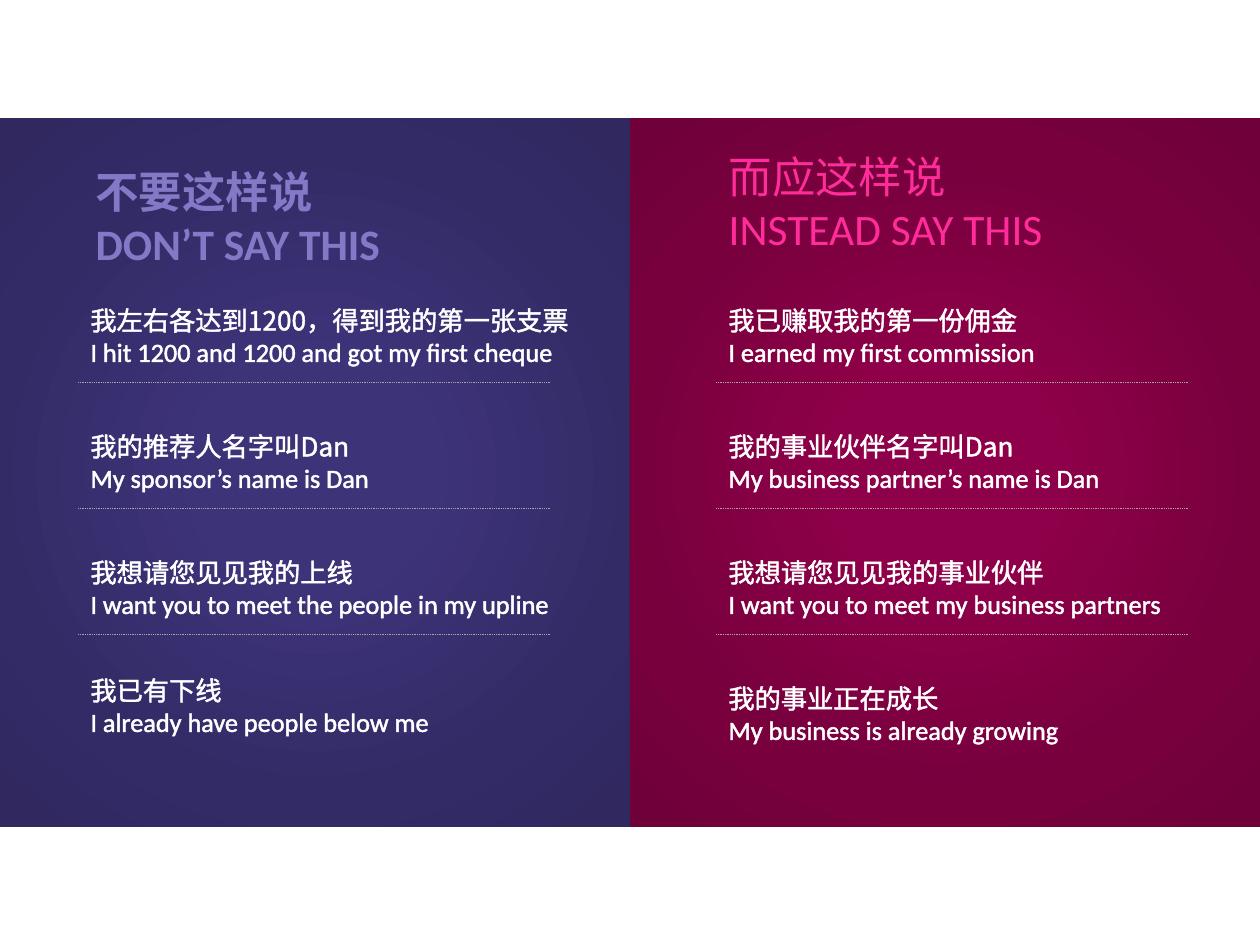
from dataclasses import dataclass

import lxml.etree
import pptx
import pptx.dml.color
import pptx.enum.dml
import pptx.enum.shapes
import pptx.enum.text
import pptx.oxml.ns
import pptx.util

EMU_PER_PX = 914400 / 126
PANEL_TOP, PANEL_WIDTH, PANEL_HEIGHT = 118, 630, 709
FIRST_ITEM_TOP, ITEM_HEIGHT, ITEM_PITCH = 298, 77, 126
FIRST_RULE_Y, RULE_WIDTH = 382, 472
HEADING_HEIGHT = 117


@dataclass(frozen=True)
class Theme:
    chinese_font: str = "Noto Sans CJK TC"
    english_font: str = "Calibri"
    heading_size: float = 24.8
    item_size: float = 15
    item_color: str = "FFFFFF"
    rule_color: str = "A6A6A6"
    purple: tuple[str, ...] = ("3D3379", "3D3379", "332B66", "30285F")
    purple_heading: str = "8479C7"
    magenta: tuple[str, ...] = ("8E0049", "8E0049", "77003D", "6F0039")
    magenta_heading: str = "FF2C99"


THEME = Theme()
GLOW_STOPS = (0, 23, 69, 97)


@dataclass(frozen=True)
class Phrase:
    chinese: str
    english: str
    width: int
    rise: int = 0


@dataclass(frozen=True)
class Side:
    panel_left: int
    glow: tuple[str, ...]
    placeholder: int
    heading: Phrase
    heading_left: int
    heading_top: int
    heading_color: str
    heading_bold: bool
    items_left: int
    items: tuple[Phrase, ...]


SIDES = (
    Side(0, THEME.purple, 0, Phrase("不要这样说", "DON’T SAY THIS", 354),
         83, 159, THEME.purple_heading, True, 78, (
             Phrase("我左右各达到1200，得到我的第一张支票",
                    "I hit 1200 and 1200 and got my first cheque", 525),
             Phrase("我的推荐人名字叫Dan", "My sponsor’s name is Dan", 396),
             Phrase("我想请您见见我的上线",
                    "I want you to meet the people in my upline", 520),
             Phrase("我已有下线", "I already have people below me", 460, rise=8),
         )),
    Side(630, THEME.magenta, 1, Phrase("而应这样说", "INSTEAD SAY THIS", 544),
         716, 144, THEME.magenta_heading, False, 716, (
             Phrase("我已赚取我的第一份佣金", "I earned my first commission", 483),
             Phrase("我的事业伙伴名字叫Dan",
                    "My business partner’s name is Dan", 471),
             Phrase("我想请您见见我的事业伙伴",
                    "I want you to meet my business partners", 508),
             Phrase("我的事业正在成长", "My business is already growing", 440),
         )),
)


def px(length: int) -> pptx.util.Emu:
    return pptx.util.Emu(round(length * EMU_PER_PX))


def rgb(color: str) -> pptx.dml.color.RGBColor:
    return pptx.dml.color.RGBColor.from_string(color)


def add_child(parent, tag: str, **attributes):
    return lxml.etree.SubElement(parent, pptx.oxml.ns.qn(tag), attributes)


def outline_text(run, color: str) -> None:
    properties = run.font._element
    outline = add_child(properties, "a:ln", w="3175")
    add_child(add_child(outline, "a:solidFill"), "a:srgbClr", val=color)
    properties.insert(0, outline)


def write_phrase(frame, phrase: Phrase, *, size: float, color: str,
                 bold: bool = False) -> None:
    """Put the Chinese line above its English translation."""
    frame.word_wrap = True
    frame.auto_size = pptx.enum.text.MSO_AUTO_SIZE.SHAPE_TO_FIT_TEXT
    frame.vertical_anchor = pptx.enum.text.MSO_ANCHOR.TOP
    lines = ((phrase.chinese, THEME.chinese_font),
             (phrase.english, THEME.english_font))
    for index, (words, font) in enumerate(lines):
        paragraph = frame.add_paragraph() if index else frame.paragraphs[0]
        paragraph.alignment = pptx.enum.text.PP_ALIGN.LEFT
        paragraph.space_before = pptx.util.Pt(0)
        run = paragraph.add_run()
        run.text = words
        run.font.name = font
        run.font.size = pptx.util.Pt(size)
        run.font.bold = bold
        run.font.color.rgb = rgb(color)
        add_child(run.font._element, "a:ea", typeface=THEME.chinese_font)
        outline_text(run, color)


def draw_panel(slide, side: Side) -> None:
    panel = slide.shapes.add_shape(
        pptx.enum.shapes.MSO_SHAPE.RECTANGLE,
        px(side.panel_left), px(PANEL_TOP), px(PANEL_WIDTH), px(PANEL_HEIGHT))
    panel.shadow.inherit = False
    panel.line.fill.background()
    panel.fill.gradient()
    gradient = panel._element.spPr.find(pptx.oxml.ns.qn("a:gradFill"))
    gradient.clear()
    stops = add_child(gradient, "a:gsLst")
    for percent, color in zip(GLOW_STOPS, side.glow):
        stop = add_child(stops, "a:gs", pos=str(percent * 1000))
        add_child(stop, "a:srgbClr", val=color)
    center = add_child(gradient, "a:path", path="circle")
    add_child(center, "a:fillToRect", l="50000", t="50000", r="50000", b="50000")


def draw_heading(slide, side: Side) -> None:
    heading = slide.placeholders[side.placeholder]
    heading.left, heading.top = px(side.heading_left), px(side.heading_top)
    heading.width, heading.height = px(side.heading.width), px(HEADING_HEIGHT)
    write_phrase(heading.text_frame, side.heading, size=THEME.heading_size,
                 color=side.heading_color, bold=side.heading_bold)
    slide.shapes._spTree.append(heading._element)  # bring in front of the panel


def draw_rule(slide, left: int, y: int) -> None:
    rule = slide.shapes.add_connector(
        pptx.enum.shapes.MSO_CONNECTOR.STRAIGHT,
        px(left), px(y), px(left + RULE_WIDTH), px(y))
    rule.line.color.rgb = rgb(THEME.rule_color)
    rule.line.width = pptx.util.Pt(0.5)
    rule.line.dash_style = pptx.enum.dml.MSO_LINE.ROUND_DOT
    add_child(rule._element.spPr, "a:effectLst")


def draw_items(slide, side: Side) -> None:
    for row, item in enumerate(side.items):
        top = FIRST_ITEM_TOP + row * ITEM_PITCH - item.rise
        box = slide.shapes.add_textbox(
            px(side.items_left), px(top), px(item.width), px(ITEM_HEIGHT))
        write_phrase(box.text_frame, item, size=THEME.item_size,
                     color=THEME.item_color)
        if row < len(side.items) - 1:
            draw_rule(slide, side.items_left, FIRST_RULE_Y + row * ITEM_PITCH)


def main() -> None:
    deck = pptx.Presentation()
    deck.slide_width, deck.slide_height = px(1260), px(945)
    comparison_layout = deck.slide_layouts[4]
    slide = deck.slides.add_slide(comparison_layout)
    used = {side.placeholder for side in SIDES}
    for placeholder in list(slide.placeholders):
        if placeholder.placeholder_format.idx not in used:
            slide.shapes._spTree.remove(placeholder._element)
    for side in SIDES:
        draw_panel(slide, side)
        draw_heading(slide, side)
        draw_items(slide, side)
    deck.save("out.pptx")


if __name__ == "__main__":
    main()
